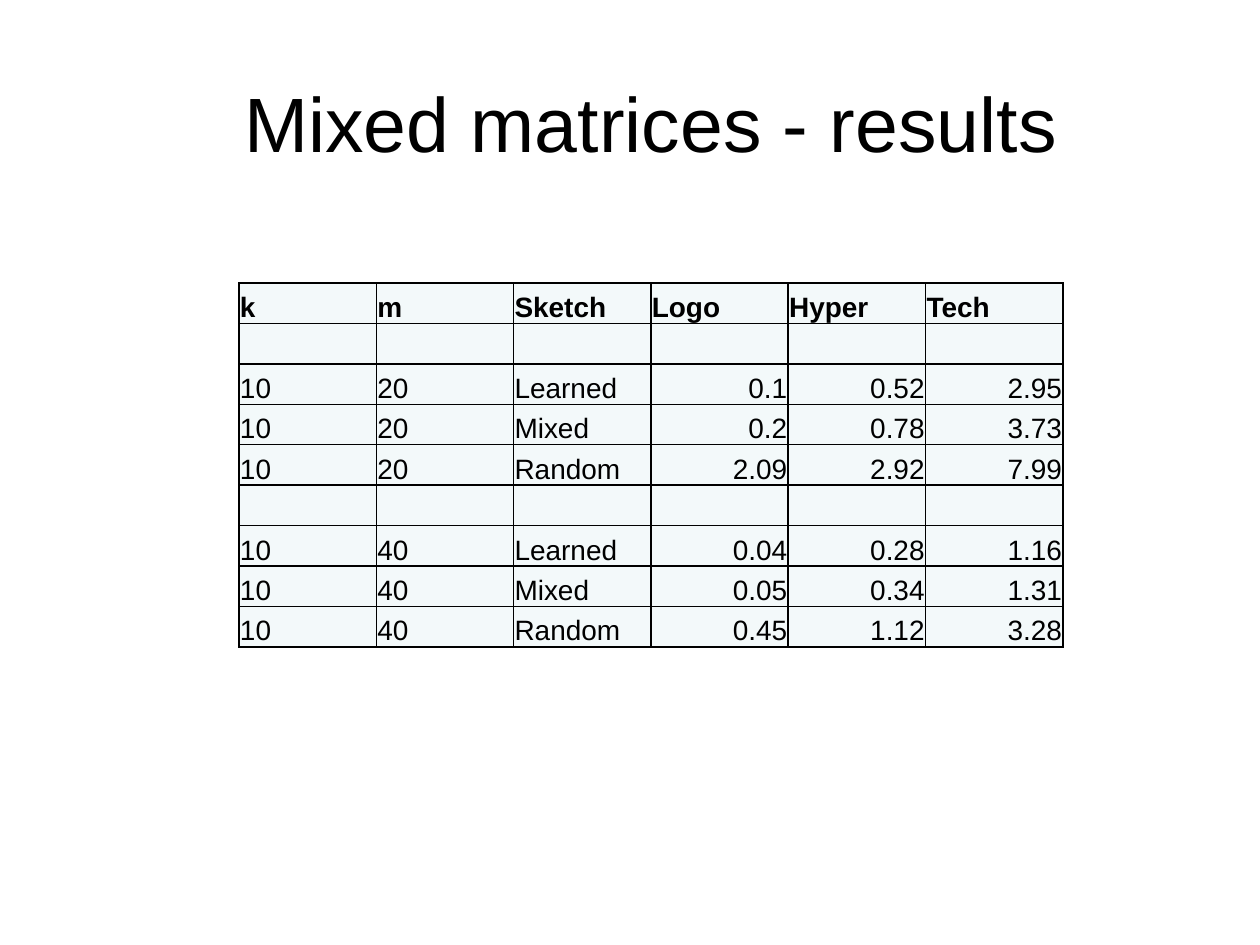
from dataclasses import dataclass

import lxml.etree
import pptx
import pptx.dml.color
import pptx.enum.text
import pptx.oxml.ns
import pptx.util

PX = 914400 / 126  # EMU in one px
BLACK = pptx.dml.color.RGBColor(0x00, 0x00, 0x00)
WHITE = pptx.dml.color.RGBColor(0xFF, 0xFF, 0xFF)
PALE = pptx.dml.color.RGBColor(0xF3, 0xF9, 0xFA)
ALIGN = pptx.enum.text.PP_ALIGN
ANCHOR = pptx.enum.text.MSO_ANCHOR
TITLE_ONLY = 5
FIRST_NUMBER_COL = 3


@dataclass
class Box:
    left: int
    top: int
    width: int
    height: int

    def emu(self) -> list[int]:
        return [px(n) for n in (self.left, self.top, self.width, self.height)]


@dataclass
class Result:
    k: int
    m: int
    sketch: str
    logo: float
    hyper: float
    tech: float

    def texts(self) -> list[str]:
        return [str(v) for v in
                (self.k, self.m, self.sketch, self.logo, self.hyper, self.tech)]


TITLE_BOX = Box(63, 38, 1176, 168)
TABLE_BOX = Box(239, 283, 824, 364)
HEADER = ["k", "m", "Sketch", "Logo", "Hyper", "Tech"]
GROUPS = [
    [Result(10, 20, "Learned", 0.1, 0.52, 2.95),
     Result(10, 20, "Mixed", 0.2, 0.78, 3.73),
     Result(10, 20, "Random", 2.09, 2.92, 7.99)],
    [Result(10, 40, "Learned", 0.04, 0.28, 1.16),
     Result(10, 40, "Mixed", 0.05, 0.34, 1.31),
     Result(10, 40, "Random", 0.45, 1.12, 3.28)],
]


def px(n: float) -> int:
    return round(n * PX)


def set_attrs(obj, values: dict) -> None:
    for name, value in values.items():
        setattr(obj, name, value)


def write(p, text: str, size: int, bold: bool = False) -> None:
    r = p.add_run()
    r.text = text
    set_attrs(r.font, {"name": "Arial", "size": pptx.util.Pt(size), "bold": bold})
    r.font.color.rgb = BLACK


def add_borders(cell) -> None:
    """Put the four lines ahead of the fill, where the schema wants them."""
    tc_pr = cell._tc.get_or_add_tcPr()
    qn = pptx.oxml.ns.qn
    for i, side in enumerate(("lnL", "lnR", "lnT", "lnB")):
        ln = lxml.etree.Element(qn(f"a:{side}"), w=str(pptx.util.Pt(1)))
        fill = lxml.etree.SubElement(ln, qn("a:solidFill"))
        lxml.etree.SubElement(fill, qn("a:srgbClr"), val=str(BLACK))
        tc_pr.insert(i, ln)


def format_cell(cell) -> None:
    set_attrs(cell, {
        "vertical_anchor": ANCHOR.BOTTOM,
        "margin_left": px(1), "margin_right": px(1),
        "margin_top": px(1), "margin_bottom": 0,
    })
    cell.fill.solid()
    cell.fill.fore_color.rgb = PALE
    add_borders(cell)


def add_results(s, box: Box) -> None:
    rows = [HEADER]
    for group in GROUPS:
        rows.append([""] * len(HEADER))
        rows.extend(result.texts() for result in group)
    table = s.shapes.add_table(len(rows), len(HEADER), *box.emu()).table
    set_attrs(table, {"first_row": False, "horz_banding": False})
    for column in table.columns:
        column.width = px(box.width / len(HEADER))
    for row in table.rows:
        row.height = px(box.height / len(rows))
    for i, texts in enumerate(rows):
        for j, text in enumerate(texts):
            cell = table.cell(i, j)
            format_cell(cell)
            if text:
                p = cell.text_frame.paragraphs[0]
                if i > 0 and j >= FIRST_NUMBER_COL:
                    p.alignment = ALIGN.RIGHT
                write(p, text, 16, bold=i == 0)


def add_title(s, text: str, box: Box) -> None:
    sp = s.shapes.title
    set_attrs(sp, dict(zip(("left", "top", "width", "height"), box.emu())))
    tf = sp.text_frame
    set_attrs(tf, {"vertical_anchor": ANCHOR.MIDDLE, "word_wrap": True})
    p = tf.paragraphs[0]
    p.alignment = ALIGN.CENTER
    write(p, text, 44)


def main() -> None:
    prs = pptx.Presentation()
    set_attrs(prs, {"slide_width": px(1260), "slide_height": px(945)})
    s = prs.slides.add_slide(prs.slide_layouts[TITLE_ONLY])
    s.background.fill.solid()
    s.background.fill.fore_color.rgb = WHITE
    add_title(s, "Mixed matrices - results", TITLE_BOX)
    add_results(s, TABLE_BOX)
    prs.save("out.pptx")


if __name__ == "__main__":
    main()
